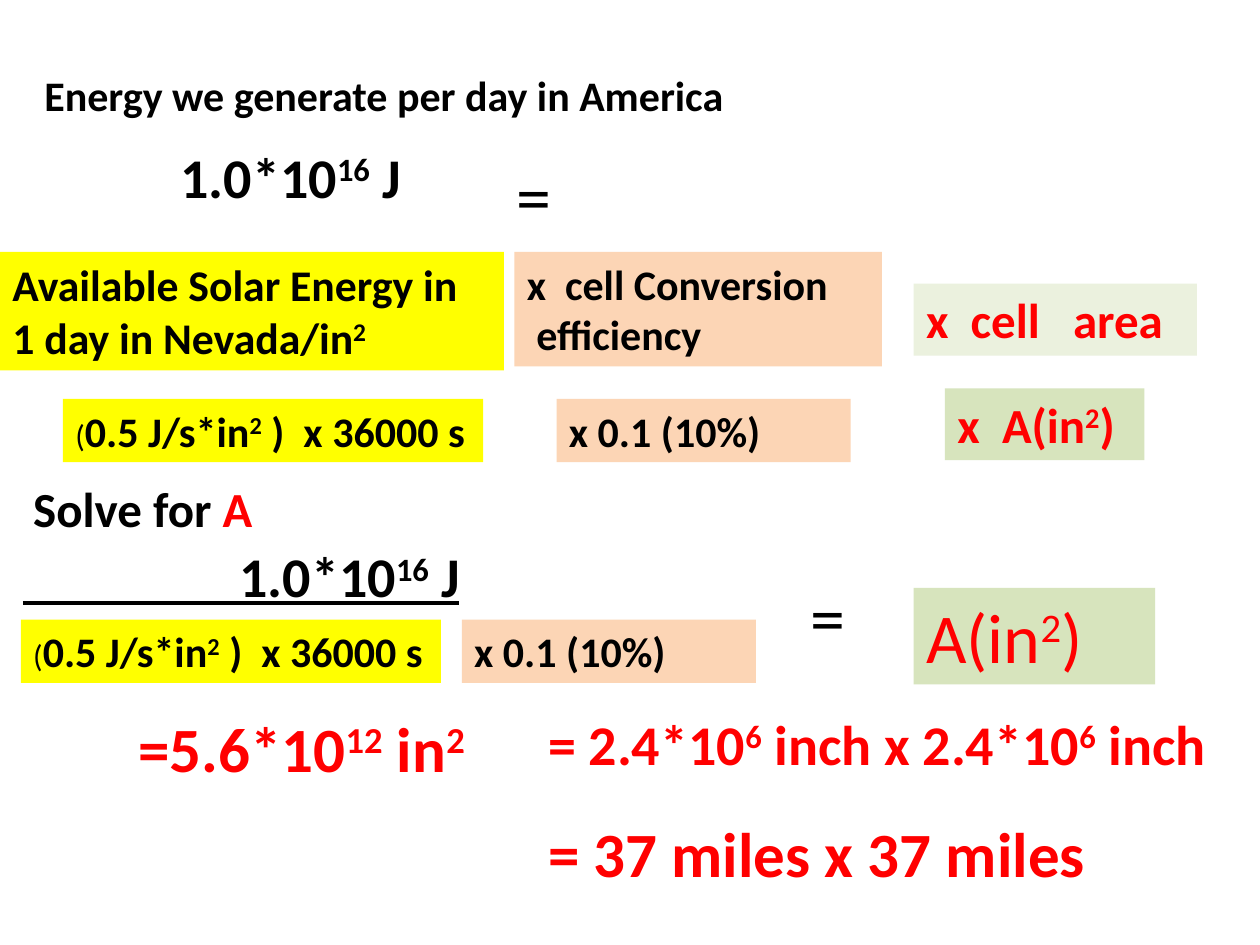
from pptx import Presentation
from pptx.dml.color import RGBColor
from pptx.enum.shapes import MSO_CONNECTOR, MSO_SHAPE
from pptx.enum.text import MSO_ANCHOR, MSO_AUTO_SIZE, PP_ALIGN
from pptx.oxml.ns import qn
from pptx.util import Cm, Pt
from lxml import etree

BLACK = RGBColor(0x00, 0x00, 0x00)
RED = RGBColor(0xFF, 0x00, 0x00)
YELLOW = RGBColor(0xFF, 0xFF, 0x00)
PEACH = RGBColor(0xFC, 0xD5, 0xB5)
GREEN = RGBColor(0xD7, 0xE4, 0xBD)
PALE_GREEN = RGBColor(0xEB, 0xF1, 0xDE)
FONT = "Calibri"
RECTANGLE = MSO_SHAPE.RECTANGLE
STRAIGHT = MSO_CONNECTOR.STRAIGHT
LEFT = PP_ALIGN.LEFT
TOP = MSO_ANCHOR.TOP
NO_AUTOSIZE = MSO_AUTO_SIZE.NONE
SUPERSCRIPT = "30000"


def add_text(p, text, size=24, color=BLACK, bold=True):
    for i, part in enumerate(text.split("^")):
        if not part:
            continue
        r = p.add_run()
        r.text = part
        r.font.name = FONT
        r.font.size = Pt(size)
        r.font.bold = bold
        r.font.color.rgb = color
        if i % 2:
            r._r.get_or_add_rPr().set("baseline", SUPERSCRIPT)


def start_text(sp):
    tf = sp.text_frame
    tf.word_wrap = True
    tf.auto_size = NO_AUTOSIZE
    tf.vertical_anchor = TOP
    p = tf.paragraphs[0]
    p.alignment = LEFT
    return p


def add_title(s, left, top, width, height, text):
    sp = s.shapes.title
    sp.left, sp.top, sp.width, sp.height = map(Cm, (left, top, width, height))
    add_text(start_text(sp), text)


def add_label(s, left, top, width, height, text="", **style):
    sp = s.shapes.add_textbox(Cm(left), Cm(top), Cm(width), Cm(height))
    p = start_text(sp)
    add_text(p, text, **style)
    return p


def add_box(s, left, top, width, height, fill, *lines, **style):
    sp = s.shapes.add_shape(RECTANGLE, Cm(left), Cm(top), Cm(width), Cm(height))
    sp.shadow.inherit = False
    sp.fill.solid()
    sp.fill.fore_color.rgb = fill
    sp.line.fill.background()
    p = start_text(sp)
    for i, line in enumerate(lines):
        if i:
            p = sp.text_frame.add_paragraph()
            p.alignment = LEFT
        add_text(p, line, **style)
    return p


def add_factors(s, energy_left, efficiency_left, top):
    p = add_box(s, energy_left, top, 8.47, 1.28, YELLOW)
    add_text(p, "(", size=18, bold=False)
    add_text(p, "0.5 J/s*in^2^ )  x 36000 s")
    add_box(s, efficiency_left, top, 5.93, 1.28, PEACH, "x 0.1 (10%)")


def add_fraction_bar(s, left, right, y):
    bar = s.shapes.add_connector(STRAIGHT, Cm(left), Cm(y), Cm(right), Cm(y))
    bar.line.color.rgb = BLACK
    bar.line.width = Pt(2.25)
    etree.SubElement(bar._element.spPr, qn("a:effectLst"))


def main():
    prs = Presentation()
    prs.slide_width, prs.slide_height = Cm(25.4), Cm(19.05)
    s = prs.slides.add_slide(prs.slide_layouts[5])

    add_title(s, 0.64, 1.27, 19.26, 1.27, "Energy we generate per day in America")
    add_label(s, 3.39, 2.75, 5.5, 1.63, "1.0*10^16^ J", size=32)
    add_label(s, 10.16, 2.96, 4.02, 1.95, "=", size=40, bold=False)

    add_box(s, 0, 5.08, 10.16, 2.39, YELLOW,
            "Available Solar Energy in  1 day in Nevada/in^2^", size=25)
    add_box(s, 10.37, 5.08, 7.41, 2.31, PEACH, "x  cell Conversion", " efficiency")
    add_box(s, 18.42, 5.72, 5.71, 1.45, PALE_GREEN, "x  cell   area", size=28, color=RED)
    add_factors(s, 1.27, 11.22, 8.04)
    add_box(s, 19.05, 7.83, 4.02, 1.45, GREEN, "x  A(in^2^)", size=28, color=RED)

    p = add_label(s, 0.42, 9.53, 8.26, 1.45, "Solve for ", size=28)
    add_text(p, "A", size=28, color=RED)
    add_label(s, 4.58, 10.8, 5.5, 1.63, "1.0*10^16^ J", size=32)
    add_fraction_bar(s, 0.46, 9.25, 12.15)
    add_factors(s, 0.42, 9.31, 12.49)
    add_label(s, 16.09, 11.43, 3.81, 1.95, "=", size=40, bold=False)
    add_box(s, 18.42, 11.85, 4.87, 1.95, GREEN, "A(in^2^)", size=40, color=RED, bold=False)

    add_label(s, 2.54, 14.18, 7.83, 1.8, "=5.6*10^12^ in^2^", size=36, color=RED)
    add_label(s, 10.8, 14.18, 14.6, 1.63, "= 2.4*10^6^ inch x 2.4*10^6^ inch",
              size=32, color=RED)
    add_label(s, 10.8, 16.3, 11.86, 1.8, "= 37 miles x 37 miles", size=36, color=RED)

    prs.save("out.pptx")


if __name__ == "__main__":
    main()
